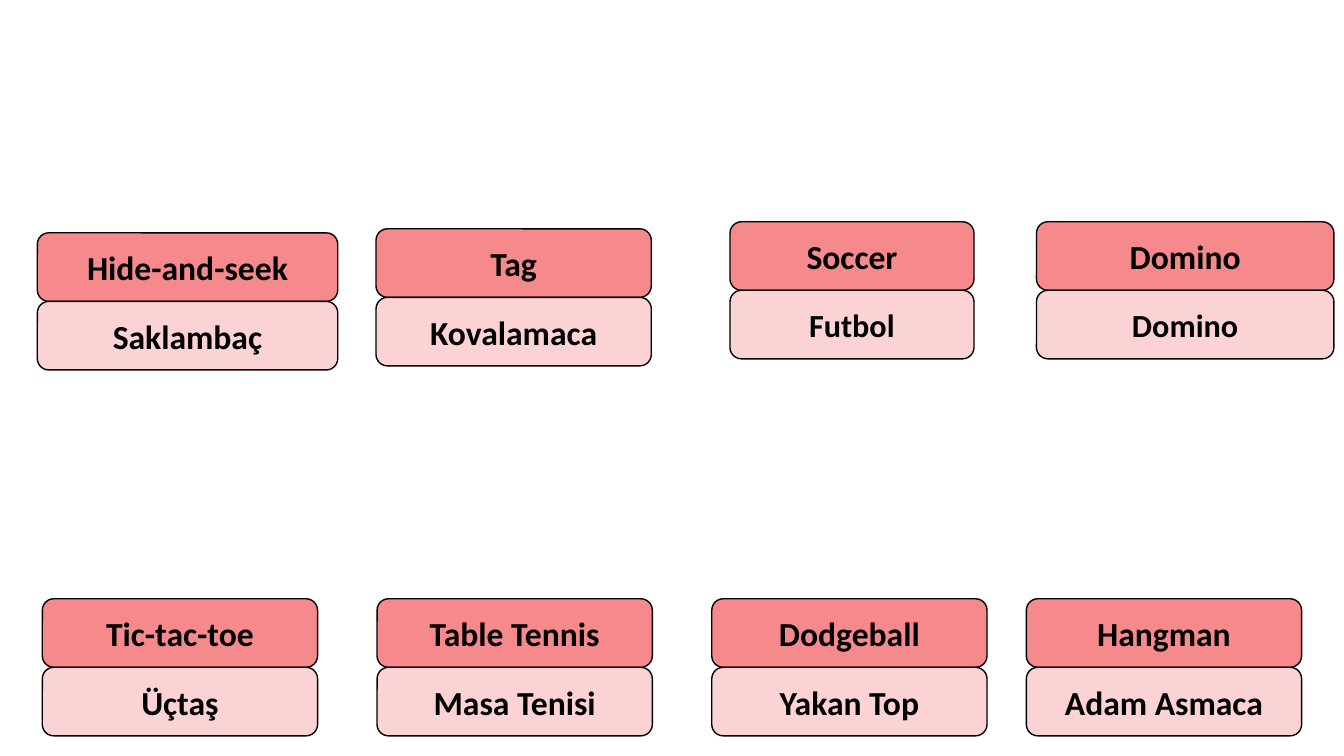
from pptx import Presentation
from pptx.dml.color import RGBColor
from pptx.enum.shapes import MSO_SHAPE as Shape
from pptx.enum.text import MSO_ANCHOR as Anchor, PP_ALIGN as Align
from pptx.util import Emu, Pt

EMU_PER_PX = 9144
CORAL = RGBColor(0xF5, 0x89, 0x8B)
BLUSH = RGBColor(0xFC, 0xD3, 0xD4)
BLACK = RGBColor(0, 0, 0)

LABEL_HEIGHT = 68
BOTTOM_ROW = 594
CARD_WIDTH = 273

GAMES = [
    ("Hide-and-seek", "Saklambaç", 37, 231, 298, 24),
    ("Tag", "Kovalamaca", 373, 227, CARD_WIDTH, 24),
    ("Soccer", "Futbol", 724, 220, 242, 23),
    ("Domino", "Domino", 1028, 220, 295, 23),
    ("Tic-tac-toe", "Üçtaş", 42, BOTTOM_ROW, CARD_WIDTH, 24),
    ("Table Tennis", "Masa Tenisi", 374, BOTTOM_ROW, CARD_WIDTH, 24),
    ("Dodgeball", "Yakan Top", 706, BOTTOM_ROW, CARD_WIDTH, 24),
    ("Hangman", "Adam Asmaca", 1018, BOTTOM_ROW, CARD_WIDTH, 24),
]


def px(length):
    return Emu(length * EMU_PER_PX)


class GameSlide:
    font_name = "Calibri"
    english_size = 24

    def __init__(self, page):
        self.page = page

    def label(self, text, left, top, width, fill, size):
        box = self.page.shapes.add_shape(
            Shape.ROUNDED_RECTANGLE, px(left), px(top), px(width), px(LABEL_HEIGHT))
        box.shadow.inherit = False
        box.fill.solid()
        box.fill.fore_color.rgb = fill
        box.line.color.rgb = BLACK
        box.line.width = Pt(1)
        frame = box.text_frame
        frame.word_wrap = True
        frame.vertical_anchor = Anchor.MIDDLE
        para = frame.paragraphs[0]
        para.text = text
        para.alignment = Align.CENTER
        para.font.name = self.font_name
        para.font.size = Pt(size)
        para.font.bold = True
        para.font.color.rgb = BLACK

    def card(self, english, turkish, left, top, width, turkish_size):
        self.label(english, left, top, width, CORAL, self.english_size)
        self.label(turkish, left, top + LABEL_HEIGHT, width, BLUSH, turkish_size)


def main():
    deck = Presentation()
    deck.slide_width, deck.slide_height = px(1333), px(750)
    slide = GameSlide(deck.slides.add_slide(deck.slide_layouts[6]))
    for game in GAMES:
        slide.card(*game)
    deck.save("out.pptx")


if __name__ == "__main__":
    main()
